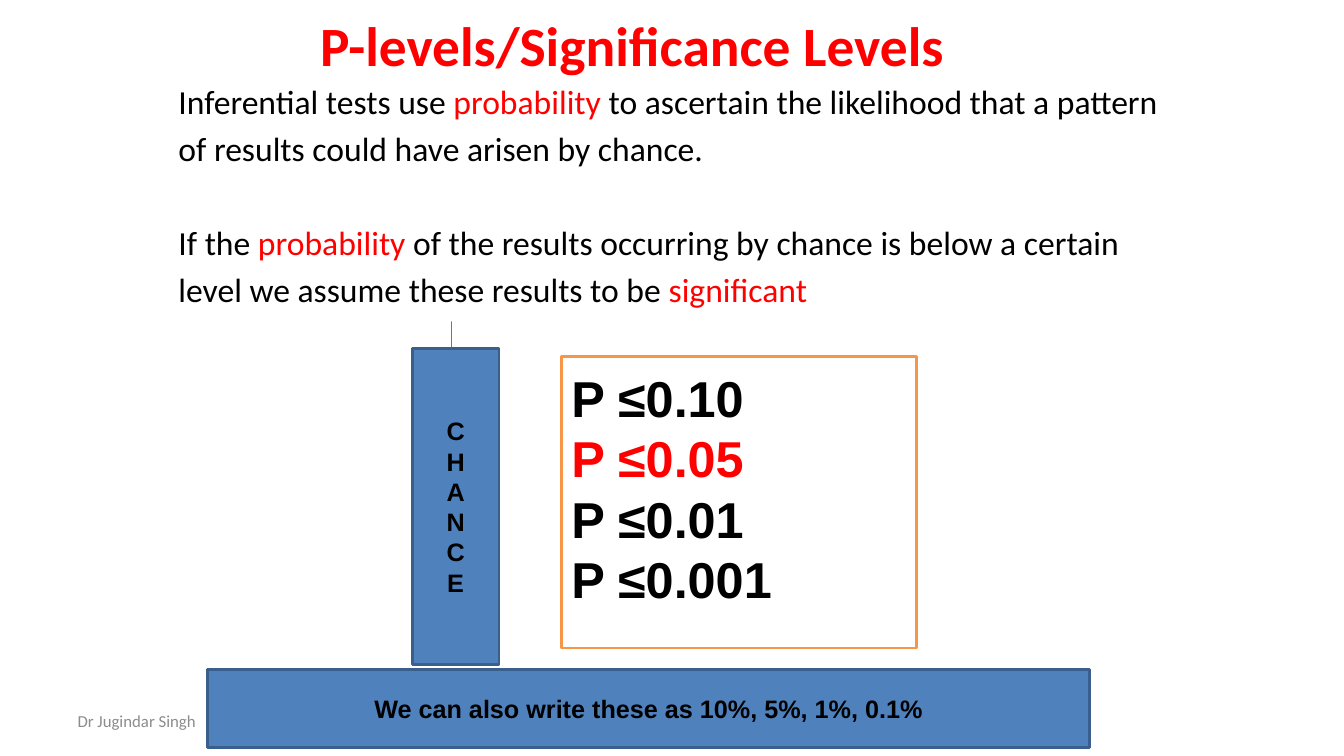
from dataclasses import dataclass
from typing import Optional

from lxml.etree import SubElement
from pptx import Presentation
from pptx.dml.color import RGBColor
from pptx.enum.shapes import MSO_CONNECTOR, MSO_SHAPE
from pptx.enum.text import MSO_ANCHOR, MSO_AUTO_SIZE, PP_ALIGN
from pptx.oxml.ns import qn
from pptx.util import Inches, Pt

WIDTH, HEIGHT = Inches(13.333), Inches(7.5)
RED, BLACK, GRAY, WHITE = "FF0000", "000000", "8C8C8C", "FFFFFF"
BLUE, NAVY, ORANGE = "4F81BD", "3A5F8C", "F79646"

Run = tuple[str, str]  # text, colour
Line = list[Run]


@dataclass
class Area:
    """Left, top, width and height in percent of the slide."""
    left: float
    top: float
    width: float
    height: float


@dataclass
class Style:
    font: str
    size: float
    bold: bool = False
    align: PP_ALIGN = PP_ALIGN.LEFT
    anchor: MSO_ANCHOR = MSO_ANCHOR.MIDDLE


@dataclass
class Box:
    area: Area
    fill: str
    edge: str
    lines: list[Line]
    style: Style
    foot: Optional[float] = None  # bottom inset, percent of height


def color(code: str) -> RGBColor:
    return RGBColor.from_string(code)


def across(share: float) -> int:
    return round(WIDTH * share / 100)


def down(share: float) -> int:
    return round(HEIGHT * share / 100)


def place(shape, area: Area) -> None:
    shape.left, shape.top = across(area.left), down(area.top)
    shape.width, shape.height = across(area.width), down(area.height)


def write(shape, lines: list[Line], style: Style) -> None:
    frame = shape.text_frame
    frame.word_wrap = True
    frame.auto_size = MSO_AUTO_SIZE.NONE
    frame.vertical_anchor = style.anchor
    for i, line in enumerate(lines):
        para = frame.paragraphs[0] if i == 0 else frame.add_paragraph()
        para.alignment = style.align
        para.space_before = Pt(0)
        for text, code in line:
            run = para.add_run()
            run.text = text
            font = run.font
            font.name, font.size, font.bold = style.font, Pt(style.size), style.bold
            font.color.rgb = color(code)


def draw(slide, box: Box) -> None:
    shape = slide.shapes.add_shape(MSO_SHAPE.RECTANGLE, 0, 0, 0, 0)
    place(shape, box.area)
    shape.shadow.inherit = False
    shape.fill.solid()
    shape.fill.fore_color.rgb = color(box.fill)
    shape.line.color.rgb = color(box.edge)
    shape.line.width = Pt(2)
    write(shape, box.lines, box.style)
    if box.foot is not None:
        shape.text_frame.margin_bottom = down(box.foot)


def arrow(slide, left: float, start: float, end: float) -> None:
    line = slide.shapes.add_connector(
        MSO_CONNECTOR.STRAIGHT, across(left), down(start), across(left), down(end))
    line.line.color.rgb = color("4B7EBC")
    line.line.width = Pt(0.75)
    SubElement(line.line._get_or_add_ln(), qn("a:tailEnd"), type="arrow")
    SubElement(line._element.spPr, qn("a:effectLst"))


def fill_body(slide, lines: list[Line]) -> None:
    body = slide.placeholders[1]
    place(body, Area(12.53, 10, 75, 32.53))
    body.fill.solid()
    body.fill.fore_color.rgb = color(WHITE)
    write(body, lines, Style("Calibri", 24, anchor=MSO_ANCHOR.TOP))
    for i, para in enumerate(body.text_frame.paragraphs):
        props = para._p.get_or_add_pPr()
        props.set("marL", "0")
        props.set("indent", "0")
        SubElement(props, qn("a:buNone"))
        # The third line opens the second statement
        para.space_before = Pt((0, 4.8, 38.8, 4.8)[min(i, 3)])
    # The body covers the upper end of the arrow
    slide.shapes._spTree.append(body._element)


def main() -> None:
    deck = Presentation()
    deck.slide_width, deck.slide_height = WIDTH, HEIGHT
    slide = deck.slides.add_slide(deck.slide_layouts[1])
    strong = Style("Arial", 18, True, PP_ALIGN.CENTER)

    # Title
    title = slide.shapes.title
    place(title, Area(18.15, 2.27, 57.75, 7.07))
    write(title, [[("P-levels/Significance Levels", RED)]],
          Style("Calibri", 39.6, True, PP_ALIGN.CENTER))

    # Arrow behind the chance column
    arrow(slide, 33.6, 87.47, 26)

    # Chance column, list of levels, bar with percentages
    levels = [("0.10", BLACK), ("0.05", RED), ("0.01", BLACK), ("0.001", BLACK)]
    boxes = [
        Box(Area(30.68, 46.13, 6.45, 41.73), BLUE, NAVY,
            [[(letter, BLACK)] for letter in "CHANCE"], strong),
        Box(Area(41.78, 47.2, 26.4, 38.53), WHITE, ORANGE,
            [[(f"P ≤{level}", code)] for level, code in levels],
            Style("Arial", 36, True), foot=4.5),
        Box(Area(15.45, 88.53, 65.63, 10.4), BLUE, NAVY,
            [[("We can also write these as 10%, 5%, 1%, 0.1%", BLACK)]], strong),
    ]
    for box in boxes:
        draw(slide, box)

    # Statements
    fill_body(slide, [
        [("Inferential tests use ", BLACK), ("probability", RED),
         (" to ascertain the likelihood that a pattern", BLACK)],
        [("of results could have arisen by chance.", BLACK)],
        [("If the ", BLACK), ("probability", RED),
         (" of the results occurring by chance is below a certain", BLACK)],
        [("level we assume these results to be ", BLACK), ("significant", RED)],
    ])

    # Author
    author = slide.shapes.add_textbox(0, 0, 0, 0)
    place(author, Area(5.03, 92.67, 23.33, 5.33))
    write(author, [[("Dr Jugindar Singh", GRAY)]], Style("Calibri", 12))

    deck.save("out.pptx")


if __name__ == "__main__":
    main()
